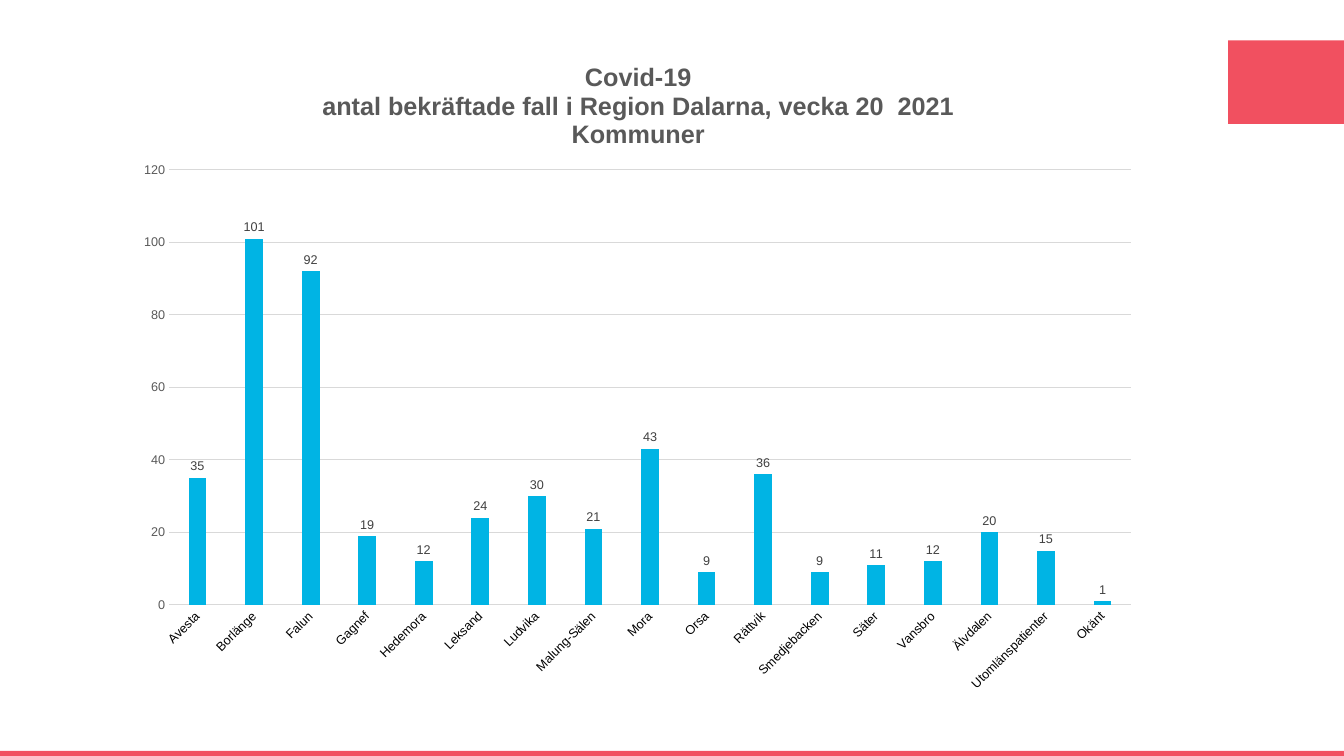
from lxml.etree import SubElement
from pptx import Presentation
from pptx.chart.data import CategoryChartData
from pptx.dml.color import RGBColor
from pptx.enum.chart import XL_CHART_TYPE, XL_LABEL_POSITION, XL_TICK_MARK
from pptx.enum.shapes import MSO_SHAPE
from pptx.enum.text import PP_ALIGN
from pptx.oxml.ns import qn
from pptx.util import Inches, Pt

CORAL = RGBColor(0xF1, 0x50, 0x60)
CYAN = RGBColor(0x00, 0xB4, 0xE4)
BLACK = RGBColor(0x00, 0x00, 0x00)
DARK_GREY = RGBColor(0x40, 0x40, 0x40)
GREY = RGBColor(0x59, 0x59, 0x59)
LIGHT_GREY = RGBColor(0xD9, 0xD9, 0xD9)
FONT = "Arial"

TITLE_LINES = [
    "Covid-19",
    "antal bekräftade fall i Region Dalarna, vecka 20  2021",
    "Kommuner",
]
CASES = {
    "Avesta": 35, "Borlänge": 101, "Falun": 92, "Gagnef": 19, "Hedemora": 12,
    "Leksand": 24, "Ludvika": 30, "Malung-Sälen": 21, "Mora": 43, "Orsa": 9,
    "Rättvik": 36, "Smedjebacken": 9, "Säter": 11, "Vansbro": 12,
    "Älvdalen": 20, "Utomlänspatienter": 15, "Okänt": 1,
}


def set_font(font, size, color, bold=False):
    font.name = FONT
    font.size = Pt(size)
    font.color.rgb = color
    font.bold = bold


def set_line(line, color):
    line.color.rgb = color
    line.width = Pt(0.75)


def set_layout(element, **fractions):
    """Place a chart part by fractions (x, y, w, h) of the chart's size."""
    layout = element.find(qn("c:layout"))
    if layout is None:
        layout = element.makeelement(qn("c:layout"))
        element.insert(0, layout)
    manual = SubElement(layout, qn("c:manualLayout"))
    if "w" in fractions:
        SubElement(manual, qn("c:layoutTarget"), val="inner")
    for axis in "xy":
        SubElement(manual, qn(f"c:{axis}Mode"), val="edge")
    for key, value in fractions.items():
        SubElement(manual, qn(f"c:{key}"), val=str(value))


def add_accent(slide, left, top, width, height):
    accent = slide.shapes.add_shape(
        MSO_SHAPE.RECTANGLE, Inches(left), Inches(top), Inches(width), Inches(height))
    accent.shadow.inherit = False
    accent.fill.solid()
    accent.fill.fore_color.rgb = CORAL
    accent.line.fill.background()


def format_title(chart):
    title = chart.chart_title
    frame = title.text_frame
    for number, line in enumerate(TITLE_LINES):
        paragraph = frame.add_paragraph() if number else frame.paragraphs[0]
        paragraph.alignment = PP_ALIGN.CENTER
        run = paragraph.add_run()
        run.text = line
        set_font(run.font, 18, GREY, bold=True)
    title.include_in_layout = False
    set_layout(chart.element.xpath("c:chart/c:title")[0], x=0.19, y=0.035)


def format_axes(chart):
    municipalities, counts = chart.category_axis, chart.value_axis
    for axis, color in ((municipalities, BLACK), (counts, GREY)):
        axis.major_tick_mark = axis.minor_tick_mark = XL_TICK_MARK.NONE
        set_font(axis.tick_labels.font, 9, color)
    set_line(municipalities.format.line, LIGHT_GREY)
    chart.element.xpath(".//c:catAx/c:txPr/a:bodyPr")[0].set("rot", "-2700000")
    counts.minimum_scale, counts.maximum_scale, counts.major_unit = 0, 120, 20
    counts.format.line.fill.background()
    set_line(counts.major_gridlines.format.line, LIGHT_GREY)


def format_columns(chart):
    plot = chart.plots[0]
    plot.gap_width, plot.overlap = 219, -27
    plot.vary_by_categories = False
    series = plot.series[0]
    series.format.fill.solid()
    series.format.fill.fore_color.rgb = CYAN
    labels = series.data_labels
    labels.show_value = True
    labels.position = XL_LABEL_POSITION.OUTSIDE_END
    set_font(labels.font, 9, DARK_GREY)


def add_case_chart(slide, left, top, width, height):
    data = CategoryChartData(number_format="0")
    data.categories = list(CASES)
    data.add_series("Series 1", list(CASES.values()))
    chart = slide.shapes.add_chart(
        XL_CHART_TYPE.COLUMN_CLUSTERED, Inches(left), Inches(top),
        Inches(width), Inches(height), data).chart
    set_font(chart.font, 10, BLACK)
    chart.has_legend = False
    format_title(chart)
    format_axes(chart)
    format_columns(chart)
    set_layout(chart.element.xpath("c:chart/c:plotArea")[0],
               x=0.044, y=0.201, w=0.936, h=0.649)


def main():
    presentation = Presentation()
    presentation.slide_width = Inches(13.33)
    presentation.slide_height = Inches(7.5)
    slide = presentation.slides.add_slide(presentation.slide_layouts[6])
    add_accent(slide, 0, 7.45, 13.33, 0.05)
    add_accent(slide, 12.18, 0.4, 1.15, 0.83)
    add_case_chart(slide, 1.23, 0.35, 10.19, 6.65)
    presentation.save("out.pptx")


if __name__ == "__main__":
    main()
